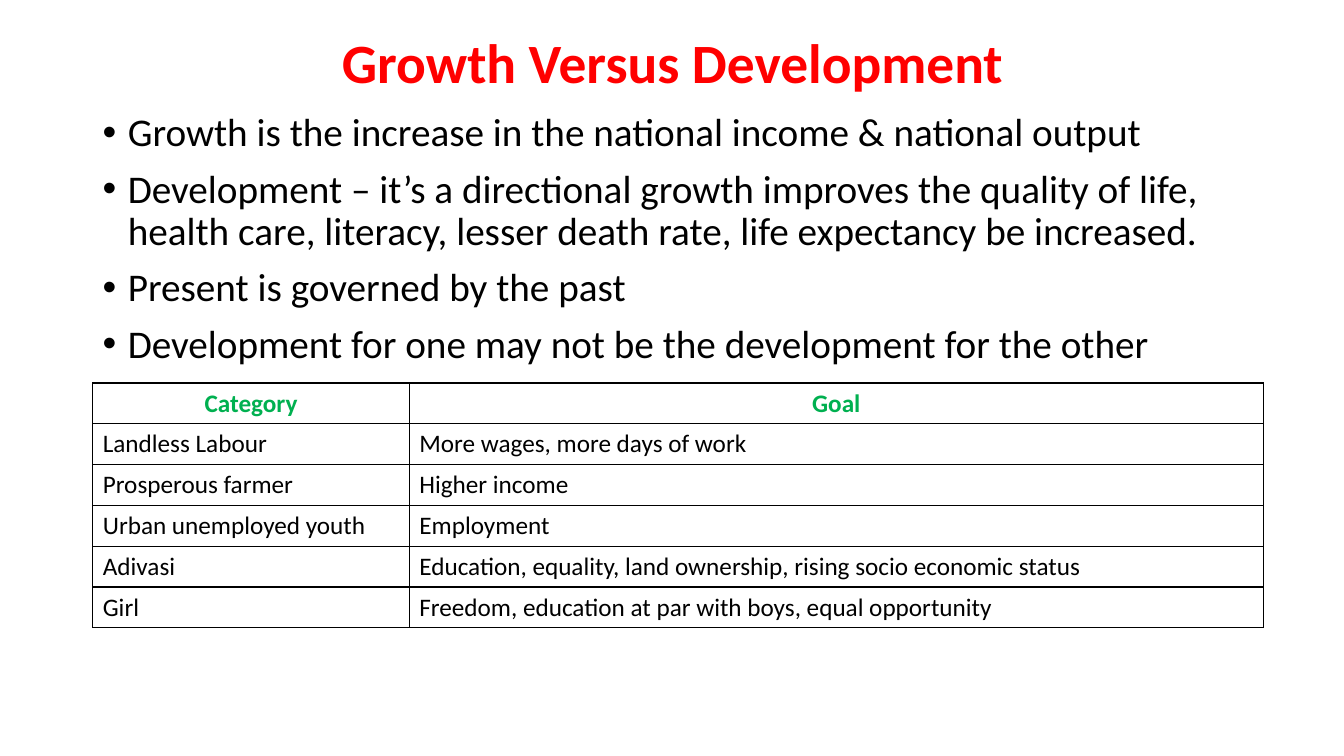
from dataclasses import dataclass

from lxml import etree
from pptx import Presentation
from pptx import util as u
from pptx.dml import color
from pptx.enum import text
from pptx.oxml import ns


@dataclass(frozen=True)
class Theme:
    face: str = "Calibri"
    red: str = "FF0000"
    green: str = "00B050"
    black: str = "000000"
    head: float = 39.6
    body: float = 28
    cell: float = 18
    rule: float = 1


THEME = Theme()
LEFT = 0.92
WIDTH = 11.5
POINTS = [
    "Growth is the increase in the national income & national output",
    "Development – it’s a directional growth improves the quality of life, "
    "health care, literacy, lesser death rate, life expectancy be increased.",
    "Present is governed by the past",
    "Development for one may not be the development for the other",
]
GOALS = [
    ("Category", "Goal"),
    ("Landless Labour", "More wages, more days of work"),
    ("Prosperous farmer", "Higher income"),
    ("Urban unemployed youth", "Employment"),
    ("Adivasi", "Education, equality, land ownership, rising socio economic status"),
    ("Girl", "Freedom, education at par with boys, equal opportunity"),
]
COLS = (3.14, 8.47)
ROW = 0.405


def apply(item, form):
    for name, value in form.items():
        setattr(item, name, value)


def write(para, words, size, tint, bold=False, **form):
    apply(para, form)
    run = para.add_run()
    run.text = words
    apply(run.font, {"name": THEME.face, "size": u.Pt(size), "bold": bold})
    run.font.color.rgb = color.RGBColor.from_string(tint)


def add_box(slide, top, height, anchor):
    box = slide.shapes.add_textbox(
        u.Inches(LEFT), u.Inches(top), u.Inches(WIDTH), u.Inches(height))
    apply(box.text_frame, {"word_wrap": True, "vertical_anchor": anchor})
    return box.text_frame


def add_title(slide, words):
    frame = add_box(slide, 0.4, 0.5, text.MSO_ANCHOR.MIDDLE)
    write(frame.paragraphs[0], words, THEME.head, THEME.red, True,
          alignment=text.PP_ALIGN.CENTER, line_spacing=0.9)


def set_bullet(para):
    props = para._p.get_or_add_pPr()
    props.set("marL", str(u.Inches(0.25)))
    props.set("indent", str(u.Inches(-0.25)))
    etree.SubElement(props, ns.qn("a:buFont"), typeface="Arial")
    etree.SubElement(props, ns.qn("a:buChar"), char="•")


def add_points(slide, points):
    frame = add_box(slide, 1.07, 5.68, text.MSO_ANCHOR.TOP)
    for num, words in enumerate(points):
        para = frame.add_paragraph() if num else frame.paragraphs[0]
        write(para, words, THEME.body, THEME.black,
              line_spacing=0.9, space_before=u.Pt(10))
        set_bullet(para)


def set_border(cell):
    props = cell._tc.get_or_add_tcPr()
    for num, side in enumerate(("lnL", "lnR", "lnT", "lnB")):
        line = etree.Element(ns.qn("a:" + side), w=str(u.Pt(THEME.rule)))
        fill = etree.SubElement(line, ns.qn("a:solidFill"))
        etree.SubElement(fill, ns.qn("a:srgbClr"), val=THEME.black)
        props.insert(num, line)


def add_grid(slide, rows):
    grid = slide.shapes.add_table(
        len(rows), len(COLS), u.Inches(LEFT), u.Inches(3.8),
        u.Inches(sum(COLS)), u.Inches(ROW * len(rows))).table
    apply(grid, {"first_row": False, "horz_banding": False})
    for col, width in zip(grid.columns, COLS):
        col.width = u.Inches(width)
    for y, row in enumerate(rows):
        head = y == 0
        for x, words in enumerate(row):
            cell = grid.cell(y, x)
            cell.fill.background()
            set_border(cell)
            write(cell.text_frame.paragraphs[0], words, THEME.cell,
                  THEME.green if head else THEME.black, head,
                  alignment=text.PP_ALIGN.CENTER if head else text.PP_ALIGN.LEFT)


def main():
    deck = Presentation()
    apply(deck, {"slide_width": u.Inches(13.33), "slide_height": u.Inches(7.5)})
    slide = deck.slides.add_slide(deck.slide_layouts[6])
    add_title(slide, "Growth Versus Development")
    add_points(slide, POINTS)
    add_grid(slide, GOALS)
    deck.save("out.pptx")


if __name__ == "__main__":
    main()
